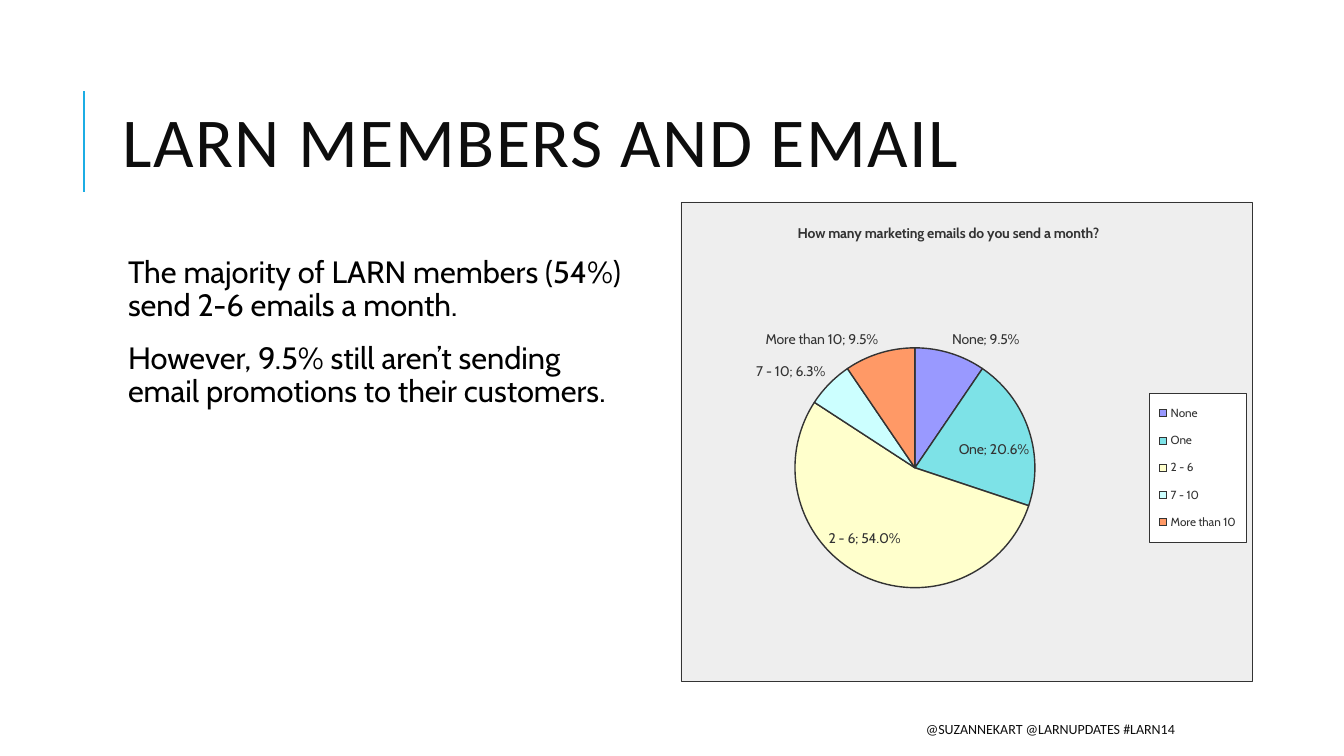
"""Build a slide on how many marketing emails members send a month."""
from dataclasses import dataclass

from lxml import etree
from pptx import Presentation
from pptx.chart.data import CategoryChartData
from pptx.dml.color import RGBColor
from pptx.enum.chart import XL_CHART_TYPE, XL_LABEL_POSITION, XL_LEGEND_POSITION
from pptx.enum.shapes import MSO_CONNECTOR
from pptx.enum.text import MSO_ANCHOR, PP_ALIGN
from pptx.oxml import parse_xml
from pptx.oxml.ns import qn
from pptx.util import Inches, Pt

PIE = XL_CHART_TYPE.PIE
BEST_FIT = XL_LABEL_POSITION.BEST_FIT
LEGEND_RIGHT = XL_LEGEND_POSITION.RIGHT
STRAIGHT = MSO_CONNECTOR.STRAIGHT
TOP, MIDDLE = MSO_ANCHOR.TOP, MSO_ANCHOR.MIDDLE
LEFT, RIGHT = PP_ALIGN.LEFT, PP_ALIGN.RIGHT

COLORS = {
    "accent": "1CADE4",
    "heading": "0D0D0D",
    "body": "000000",
    "chart_ink": "333333",
    "chart_fill": "EEEEEE",
    "legend_fill": "FFFFFF",
}
HEADING_FONT, BODY_FONT = "Calibri", "Cabin"
NAMESPACES = (
    'xmlns:c="http://schemas.openxmlformats.org/drawingml/2006/chart" '
    'xmlns:a="http://schemas.openxmlformats.org/drawingml/2006/main"'
)


@dataclass(frozen=True)
class Area:
    left: float
    top: float
    width: float
    height: float

    def inches(self) -> tuple:
        return tuple(Inches(n) for n in (self.left, self.top, self.width, self.height))


@dataclass(frozen=True)
class Answer:
    label: str
    share: float
    color: str


ANSWERS = [
    Answer("None", 0.095, "9999FF"),
    Answer("One", 0.206, "7DE2E7"),
    Answer("2 - 6", 0.54, "FFFFCC"),
    Answer("7 - 10", 0.063, "CCFFFF"),
    Answer("More than 10", 0.095, "FF9966"),
]


def rgb(name: str) -> RGBColor:
    return RGBColor.from_string(COLORS[name])


def add_text(page, area: Area, *paragraphs: str, font: str, size: float, color: str,
             anchor=TOP, align=LEFT, line_spacing: float = 1, before: float = 0,
             after: float = 0, indent: float = 0, inset: float = 0.1,
             tracking: float = 0) -> None:
    frame = page.shapes.add_textbox(*area.inches()).text_frame
    frame.word_wrap = True
    frame.vertical_anchor = anchor
    frame.margin_left = frame.margin_right = Inches(inset)
    frame.margin_top = frame.margin_bottom = Inches(0.05)
    for index, text in enumerate(paragraphs):
        para = frame.add_paragraph() if index else frame.paragraphs[0]
        para.alignment = align
        para.line_spacing = line_spacing
        para.space_before, para.space_after = Pt(before), Pt(after)
        if indent:
            para._p.get_or_add_pPr().set("marL", str(Inches(indent)))
        span = para.add_run()
        span.text = text
        span.font.name, span.font.size = font, Pt(size)
        span.font.color.rgb = rgb(color)
        if tracking:
            span._r.get_or_add_rPr().set("spc", str(int(tracking * 100)))


def add_accent_line(page) -> None:
    line = page.shapes.add_connector(
        STRAIGHT, Inches(0.83), Inches(1.9), Inches(0.83), Inches(0.9))
    line.line.color.rgb = rgb("accent")
    line.line.width = Pt(1.5)
    etree.SubElement(line._element.spPr, qn("a:effectLst"))


def set_layout(parent, after: str | None, fields: dict[str, str | float]) -> None:
    for layout in parent.findall(qn("c:layout")):
        parent.remove(layout)
    values = "".join(f'<c:{key} val="{value}"/>' for key, value in fields.items())
    layout = parse_xml(f"<c:layout {NAMESPACES}><c:manualLayout>{values}"
                       "</c:manualLayout></c:layout>")
    if after:
        parent.find(qn(after)).addnext(layout)
    else:
        parent.insert(0, layout)


def box_style(fill: str, outlined: bool = True):
    ink = f'<a:solidFill><a:srgbClr val="{COLORS["chart_ink"]}"/></a:solidFill>'
    line = f'<a:ln w="3175">{ink}</a:ln>' if outlined else "<a:ln><a:noFill/></a:ln>"
    return parse_xml(f'<c:spPr {NAMESPACES}><a:solidFill><a:srgbClr val="{COLORS[fill]}"/>'
                     f"</a:solidFill>{line}</c:spPr>")


def set_font(font, size: float, bold: bool = False) -> None:
    font.name, font.size, font.bold = BODY_FONT, Pt(size), bold
    font.color.rgb = rgb("chart_ink")


def place(x: float, y: float, **size: float) -> dict[str, str | float]:
    return {"xMode": "edge", "yMode": "edge", "x": x, "y": y, **size}


def add_pie(page, area: Area, title: str) -> None:
    data = CategoryChartData(number_format="0.0%")
    data.categories = [answer.label for answer in ANSWERS]
    data.add_series("Series 1", [answer.share for answer in ANSWERS])
    chart = page.shapes.add_chart(PIE, *area.inches(), data).chart
    set_font(chart.font, 10)

    chart.has_title = True
    chart.chart_title.text_frame.text = title
    set_font(chart.chart_title.text_frame.paragraphs[0].runs[0].font, 10, bold=True)
    set_layout(chart.chart_title._element, "c:tx", place(0.2, 0.04))

    chart.has_legend = True
    legend = chart.legend
    legend.position = LEGEND_RIGHT
    legend.include_in_layout = False
    set_font(legend.font, 8.4)
    set_layout(legend._element, "c:legendPos", place(0.82, 0.4, w=0.17, h=0.31))
    legend._element.find(qn("c:overlay")).addnext(box_style("legend_fill"))

    plot = chart.plots[0]
    plot.vary_by_categories = True
    for index, answer in enumerate(ANSWERS):
        piece = plot.series[0].points[index].format
        piece.fill.solid()
        piece.fill.fore_color.rgb = RGBColor.from_string(answer.color)
        piece.line.color.rgb = rgb("chart_ink")
        piece.line.width = Pt(1)

    labels = plot.series[0].data_labels
    labels.show_value = labels.show_category_name = True
    labels.show_percentage = False
    labels.number_format, labels.number_format_is_linked = "0.0%", False
    labels.position = BEST_FIT
    set_font(labels.font, 10)
    separator = parse_xml(f"<c:separator {NAMESPACES}>; </c:separator>")
    labels._element.find(qn("c:showBubbleSize")).addnext(separator)

    plot_area = chart._chartSpace.chart.plotArea
    set_layout(plot_area, None,
               {"layoutTarget": "inner", **place(0.2, 0.2, w=0.42, h=0.71)})
    plot_area.append(box_style("chart_fill", outlined=False))
    chart._chartSpace.chart.addnext(box_style("chart_fill"))


def main() -> None:
    deck = Presentation()
    deck.slide_width, deck.slide_height = Inches(13.33), Inches(7.5)
    page = deck.slides.add_slide(deck.slide_layouts[6])
    add_accent_line(page)
    add_text(page, Area(1.12, 0.64, 10.63, 1.64), "LARN MEMBERS AND EMAIL",
             font=HEADING_FONT, size=50, color="heading", anchor=MIDDLE,
             line_spacing=0.8, tracking=1)
    add_text(page, Area(1.12, 2.5, 5.2, 4.4),
             "The majority of LARN members (54%) send 2-6 emails a month.",
             "However, 9.5% still aren’t sending email promotions to their customers.",
             font=BODY_FONT, size=22, color="body", line_spacing=0.9,
             before=12, after=2, indent=0.1, inset=0.05)
    add_pie(page, Area(6.75, 2, 5.67, 4.76),
            "How many marketing emails do you send a month?")
    add_text(page, Area(5.3, 7.08, 6.45, 0.3), "@SUZANNEKART @LARNUPDATES #LARN14",
             font=HEADING_FONT, size=10, color="heading", anchor=MIDDLE, align=RIGHT)
    deck.save("out.pptx")


if __name__ == "__main__":
    main()
